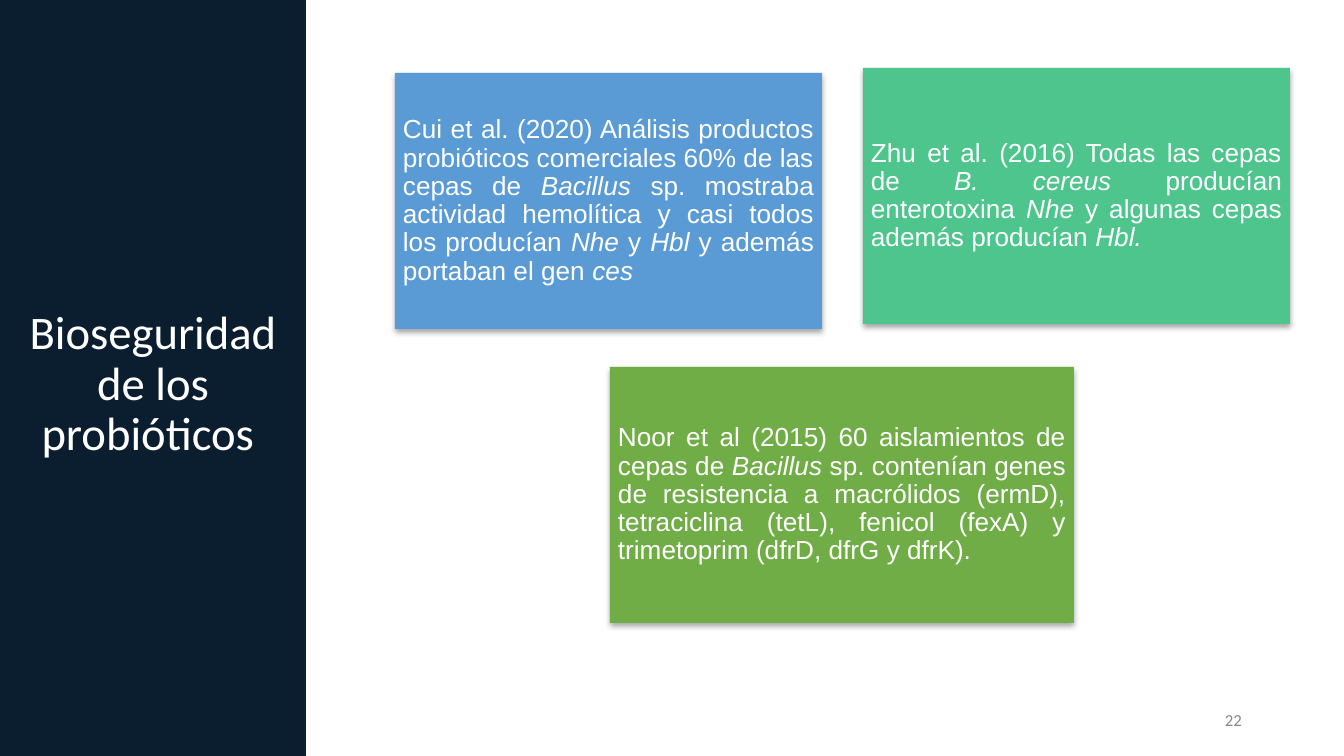
"""Build the slide on the biosafety of probiotics: a title panel and three study cards."""
from dataclasses import dataclass

from lxml.etree import SubElement
from pptx import Presentation
from pptx.dml.color import RGBColor
from pptx.enum.shapes import MSO_SHAPE
from pptx.enum.text import MSO_ANCHOR, MSO_AUTO_SIZE, PP_ALIGN
from pptx.oxml import parse_xml
from pptx.oxml.ns import nsdecls
from pptx.util import Emu, Pt


@dataclass(frozen=True)
class Theme:
    panel: str = "0B1E30"
    blue: str = "5B9BD5"
    mint: str = "4DC58D"
    green: str = "70AD47"
    white: str = "FFFFFF"
    grey: str = "888888"
    heading_font: str = "Calibri"
    body_font: str = "Arial"
    title_size: int = 25
    body_size: int = 14
    number_size: int = 9


theme = Theme()
SCALE = 9144000 / 1344
CARD_HEIGHT = 256
SHADOW = (
    f'<a:effectLst {nsdecls("a")}>'
    '<a:outerShdw blurRad="39370" dist="22860" dir="5400000" rotWithShape="0">'
    '<a:srgbClr val="000000"><a:alpha val="35000"/></a:srgbClr>'
    "</a:outerShdw></a:effectLst>"
)


def px(length):
    return Emu(round(length * SCALE))


def set_text(shape, text, font, size, color, align, margins, spacing=None):
    frame = shape.text_frame
    frame.word_wrap = True
    frame.auto_size = MSO_AUTO_SIZE.NONE
    frame.vertical_anchor = MSO_ANCHOR.MIDDLE
    frame.margin_left = frame.margin_right = px(margins[0])
    frame.margin_top = frame.margin_bottom = px(margins[1])
    para = frame.paragraphs[0]
    para.alignment = align
    para.line_spacing = spacing
    para.font.name = font
    para.font.size = Pt(size)
    para.font.color.rgb = RGBColor.from_string(color)
    for index, part in enumerate(text.split("*")):
        if part:
            span = para.add_run()
            span.text = part
            if index % 2:
                span.font.italic = True


deck = Presentation()
deck.slide_width, deck.slide_height = px(1344), px(756)
page = deck.slides.add_slide(deck.slide_layouts[5])

title = page.shapes.title
title.left, title.top, title.width, title.height = px(0), px(-4), px(306), px(778)
title.fill.solid()
title.fill.fore_color.rgb = RGBColor.from_string(theme.panel)
set_text(title, "Bioseguridad de los probióticos ", theme.heading_font, theme.title_size,
         theme.white, PP_ALIGN.CENTER, (4, 4), 0.9)

cards = [
    (395, 73, 427, theme.blue,
     "Cui et al. (2020) Análisis productos probióticos comerciales 60% de las cepas de "
     "*Bacillus *sp. mostraba actividad hemolítica y casi todos los producían *Nhe* y "
     "*Hbl *y además portaban el gen *ces*"),
    (863, 68, 427, theme.mint,
     "Zhu et al. (2016) Todas las cepas de* B. cereus *producían enterotoxina *Nhe* y "
     "algunas cepas además producían *Hbl.*"),
    (610, 367, 464, theme.green,
     "Noor et al (2015) 60 aislamientos de cepas de *Bacillus *sp. contenían genes de "
     "resistencia a macrólidos (ermD), tetraciclina (tetL), fenicol (fexA) y "
     "trimetoprim (dfrD, dfrG y dfrK). "),
]
for left, top, width, color, text in cards:
    card = page.shapes.add_shape(
        MSO_SHAPE.RECTANGLE, px(left), px(top), px(width), px(CARD_HEIGHT))
    card.fill.solid()
    card.fill.fore_color.rgb = RGBColor.from_string(color)
    card.line.fill.background()
    card._element.spPr.append(parse_xml(SHADOW))
    set_text(card, text, theme.body_font, theme.body_size, theme.white,
             PP_ALIGN.JUSTIFY, (8, 8), 0.9)

number = page.shapes.add_textbox(px(949), px(700), px(302), px(40))
set_text(number, "22", theme.heading_font, theme.number_size, theme.grey,
         PP_ALIGN.RIGHT, (9, 5))

deck.save("out.pptx")
